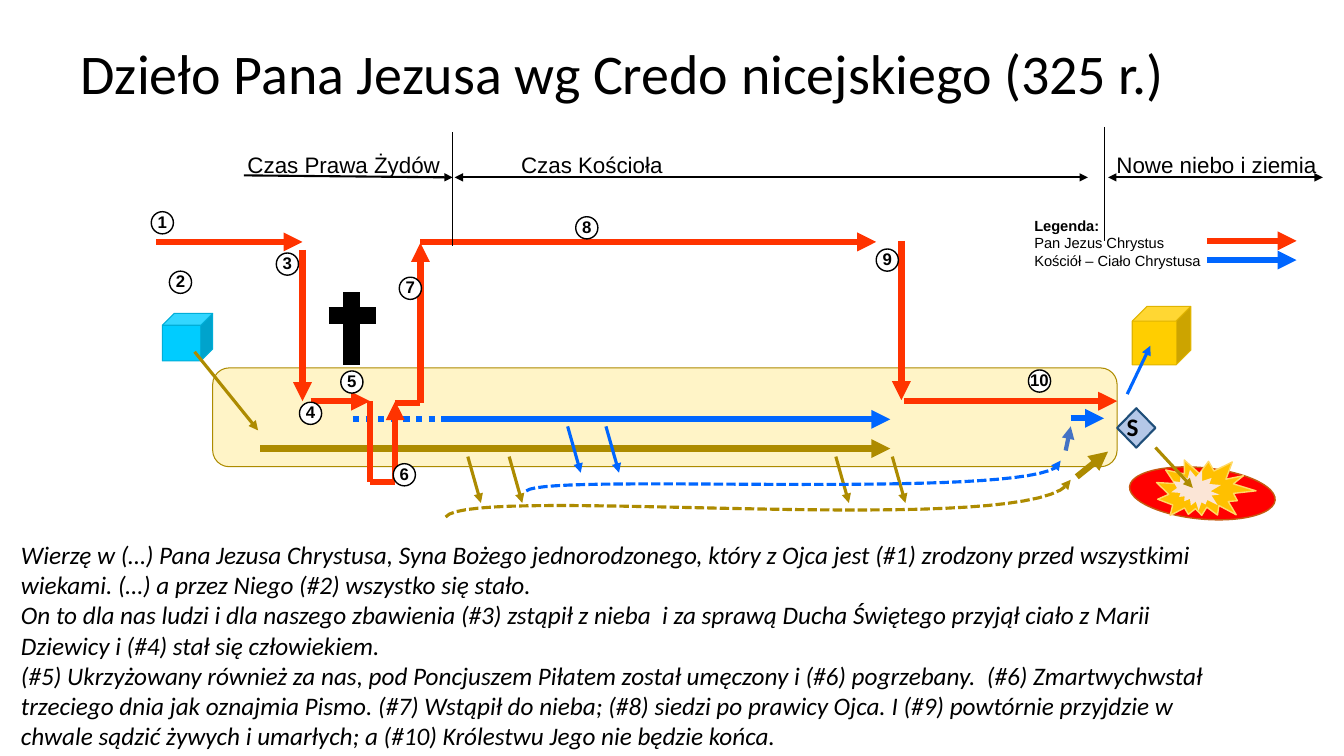
from dataclasses import dataclass

from lxml import etree
from pptx import Presentation
from pptx import util as u
from pptx.dml.color import RGBColor
from pptx.enum import dml, shapes, text
from pptx.oxml.ns import qn

PX = 9144  # EMU in one px, 100 px to the inch
RED, BLUE, GOLD, BLACK = "FF3300", "0066FF", "AD8B00", "000000"
DOT, DASH = dml.MSO_LINE.ROUND_DOT, dml.MSO_LINE.SQUARE_DOT
KIND = shapes.MSO_SHAPE
LEFT, MID = text.PP_ALIGN.LEFT, text.PP_ALIGN.CENTER
Box = tuple[int, int, int, int]


@dataclass
class Arrow:
    ends: Box  # x1, y1, x2, y2
    color: str
    width: float = 4.5
    tips: str = "tail"  # any of "head", "tail"
    dash: dml.MSO_LINE | None = None


@dataclass
class Curve:
    pts: list[tuple[int, int]]  # cubic control points
    color: str


@dataclass
class Form:
    kind: shapes.MSO_SHAPE
    box: Box
    fill: str
    line: str | None = None
    width: float = 1
    turn: float = 0


@dataclass
class Label:
    box: Box
    paras: list[str]
    font: dict
    align: text.PP_ALIGN = LEFT
    mid: bool = False
    inset: tuple[int, int] = (10, 5)
    space: float = 1.0
    head: bool = False  # first paragraph bold


def emu(*vals: float) -> list[u.Emu]:
    return [u.Emu(round(v * PX)) for v in vals]


def rgb(code: str) -> RGBColor:
    return RGBColor.from_string(code)


def stroke(shape, color: str, width: float, tips: str = "", dash=None) -> None:
    shape.line.color.rgb = rgb(color)
    shape.line.width = u.Pt(width)
    if dash:
        shape.line.dash_style = dash
    ln = shape._element.spPr.find(qn("a:ln"))
    for end in ("head", "tail"):
        if end in tips:
            etree.SubElement(ln, qn(f"a:{end}End"), type="triangle")


def write(frame, lab: Label) -> None:
    side, top = emu(*lab.inset)
    anchor = text.MSO_ANCHOR.MIDDLE if lab.mid else text.MSO_ANCHOR.TOP
    form = dict(word_wrap=True, vertical_anchor=anchor, margin_left=side,
                margin_right=side, margin_top=top, margin_bottom=top)
    for key, val in form.items():
        setattr(frame, key, val)
    for num, line in enumerate(lab.paras):
        para = frame.paragraphs[0] if num == 0 else frame.add_paragraph()
        para.alignment, para.line_spacing = lab.align, lab.space
        run = para.add_run()
        run.text = line
        for key, val in lab.font.items():
            setattr(run.font, key, val)
        run.font.color.rgb = rgb(BLACK)
        if lab.head and num == 0:
            run.font.bold = True


def draw_form(slide, form: Form):
    shape = slide.shapes.add_shape(form.kind, *emu(*form.box))
    shape.shadow.inherit = False
    shape.rotation = form.turn
    shape.fill.solid()
    shape.fill.fore_color.rgb = rgb(form.fill)
    if form.line:
        stroke(shape, form.line, form.width)
    else:
        shape.line.fill.background()
    return shape


def draw_arrow(slide, arrow: Arrow) -> None:
    line = slide.shapes.add_connector(shapes.MSO_CONNECTOR.STRAIGHT, *emu(*arrow.ends))
    stroke(line, arrow.color, arrow.width, arrow.tips, arrow.dash)
    etree.SubElement(line._element.spPr, qn("a:effectLst"))


def draw_curve(slide, curve: Curve, steps: int = 32) -> None:
    def spot(t: float) -> list[u.Emu]:
        coefs = ((1 - t) ** 3, 3 * t * (1 - t) ** 2, 3 * t * t * (1 - t), t ** 3)
        return emu(*(sum(c * v for c, v in zip(coefs, axis)) for axis in zip(*curve.pts)))

    build = slide.shapes.build_freeform(*spot(0))
    build.add_line_segments([spot(n / steps) for n in range(1, steps + 1)], close=False)
    shape = build.convert_to_shape()
    shape.shadow.inherit = False
    shape.fill.background()
    stroke(shape, curve.color, 2.25, "tail", DASH)


def draw_label(slide, lab: Label) -> None:
    write(slide.shapes.add_textbox(*emu(*lab.box)).text_frame, lab)


# Band, cubes, ellipse and bursts
FORMS = [
    Form(KIND.ROUNDED_RECTANGLE, (211, 365, 897, 98), "FFF4C7", GOLD, 0.75),
    Form(KIND.CUBE, (161, 311, 50, 47), "00CCFF", "00AED8", 0.75),
    Form(KIND.CUBE, (1123, 304, 58, 58), "FFCE00", "E0B400", 0.75),
    Form(KIND.FLOWCHART_CONNECTOR, (1120, 464, 145, 51), "FF0000", "C55A11", 1, 5.4),
    Form(KIND.EXPLOSION2, (1147, 452, 97, 68), "FFC000", "FFD966", 1, 16.2),
    Form(KIND.EXPLOSION2, (1164, 464, 47, 45), "FBE5D6", turn=56.2),
]
DIAMOND = Form(KIND.DIAMOND, (1108, 405, 38, 39), "B4C7E7", "1F4E79", 1.5)

ARROWS = [
    # Thick arrows
    Arrow((258, 445, 883, 445), GOLD),
    Arrow((417, 240, 869, 240), RED),
    Arrow((441, 416, 883, 416), BLUE),
    Arrow((417, 400, 417, 241), RED),
    Arrow((350, 416, 467, 416), BLUE, tips="", dash=DOT),
    Arrow((300, 248, 300, 398), RED),
    Arrow((308, 398, 367, 398), RED),
    Arrow((894, 239, 894, 397), RED),
    Arrow((155, 240, 300, 240), RED),
    Arrow((897, 398, 1108, 398), RED),
    Arrow((1062, 415, 1095, 415), BLUE),
    Arrow((367, 398, 367, 478), RED, tips=""),
    Arrow((367, 478, 392, 478), RED, tips=""),
    Arrow((392, 478, 392, 398), RED),
    Arrow((392, 400, 417, 400), RED, tips=""),
    Arrow((1057, 447, 1062, 423), "4472C4", 3, dash=DASH),
    Arrow((1068, 473, 1099, 448), GOLD),
    # Time axis
    Arrow((451, 176, 1079, 176), BLACK, 1.5, "head tail"),
    Arrow((449, 176, 242, 174), BLACK, 1.5, "head"),
    Arrow((1099, 176, 1312, 176), BLACK, 1.5, "head tail"),
    Arrow((449, 131, 449, 244), BLACK, 0.5, ""),
    Arrow((1095, 126, 1095, 239), BLACK, 0.5, ""),
    # Legend
    Arrow((1197, 239, 1286, 239), RED),
    Arrow((1197, 258, 1286, 258), BLUE),
    # Cross
    Arrow((326, 313, 373, 313), BLACK, 12, ""),
    Arrow((349, 362, 349, 290), BLACK, 12, ""),
    # Thin arrows at the cubes and the burst
    Arrow((193, 349, 256, 427), GOLD, 2.25),
    Arrow((1118, 391, 1141, 343), BLUE, 2.25),
    Arrow((1146, 444, 1183, 484), GOLD, 2.25),
]
# Short parallel arrows
SHORT = [(464, 453, GOLD), (505, 453, GOLD), (829, 453, GOLD), (885, 453, GOLD),
         (563, 423, BLUE), (601, 423, BLUE)]
ARROWS += [Arrow((x, y, x + 13, y + 46), color, 2.25) for x, y, color in SHORT]

# Dashed curves
CURVES = [
    Curve([(442, 513), (465, 479), (1040, 538), (1062, 476)], GOLD),
    Curve([(522, 487), (543, 468), (1056, 499), (1052, 457)], BLUE),
]

# Left and top of the numbers 1 to 10
RINGS = [(150, 210), (168, 269), (274, 251), (297, 399), (338, 368),
         (390, 460), (396, 275), (571, 215), (869, 247), (1020, 367)]

# Text
ERA = dict(name="Arial", size=u.Pt(16))
ERAS = [("Czas Prawa Żydów", 233, 216), ("Czas Kościoła", 491, 192),
        ("Nowe niebo i ziemia", 1095, 223)]
LABELS = [Label((x, 146, w, 35), [name], ERA, MID, True, (4, 4)) for name, x, w in ERAS]
LABELS += [
    Label((70, 37, 1229, 78), ["Dzieło Pana Jezusa wg Credo nicejskiego (325 r.)"],
          dict(name="Calibri", size=u.Pt(40)), mid=True, space=0.9),
    Label((1016, 210, 199, 63),
          ["Legenda:", "Pan Jezus Chrystus", "Kościół – Ciało Chrystusa"],
          dict(name="Arial", size=u.Pt(10.5)), head=True),
    Label((11, 530, 1204, 222), [
        "Wierzę w (…) Pana Jezusa Chrystusa, Syna Bożego jednorodzonego, który z Ojca jest "
        "(#1) zrodzony przed wszystkimi wiekami. (…) a przez Niego (#2) wszystko się stało.",
        "On to dla nas ludzi i dla naszego zbawienia (#3) zstąpił z nieba  i za sprawą Ducha "
        "Świętego przyjął ciało z Marii Dziewicy i (#4) stał się człowiekiem.",
        "(#5) Ukrzyżowany również za nas, pod Poncjuszem Piłatem został umęczony i (#6) "
        "pogrzebany.  (#6) Zmartwychwstał trzeciego dnia jak oznajmia Pismo. (#7) Wstąpił do "
        "nieba; (#8) siedzi po prawicy Ojca. I (#9) powtórnie przyjdzie w chwale sądzić "
        "żywych i umarłych; a (#10) Królestwu Jego nie będzie końca."],
        dict(name="Calibri", size=u.Pt(18), italic=True)),
]


def main() -> None:
    deck = Presentation()
    deck.slide_width, deck.slide_height = emu(1333, 750)
    slide = deck.slides.add_slide(deck.slide_layouts[6])
    for form in FORMS:
        draw_form(slide, form)
    for arrow in ARROWS:
        draw_arrow(slide, arrow)
    for curve in CURVES:
        draw_curve(slide, curve)
    for lab in LABELS:
        draw_label(slide, lab)

    # Shapes that hold text
    bold = dict(name="Calibri", size=u.Pt(18), bold=True)
    write(draw_form(slide, DIAMOND).text_frame,
          Label(DIAMOND.box, ["S"], bold, LEFT, True, (0, 4), 0.9))
    small = dict(name="Arial", size=u.Pt(12), bold=True)
    for num, (x, y) in enumerate(RINGS, 1):
        ring = Form(KIND.OVAL, (x, y, 22, 22), "FFFFFF", BLACK)
        frame = draw_form(slide, ring).text_frame
        write(frame, Label(ring.box, [str(num)], small, MID, True, (0, 0), 0.9))
        frame.word_wrap = False
    deck.save("out.pptx")


if __name__ == "__main__":
    main()
